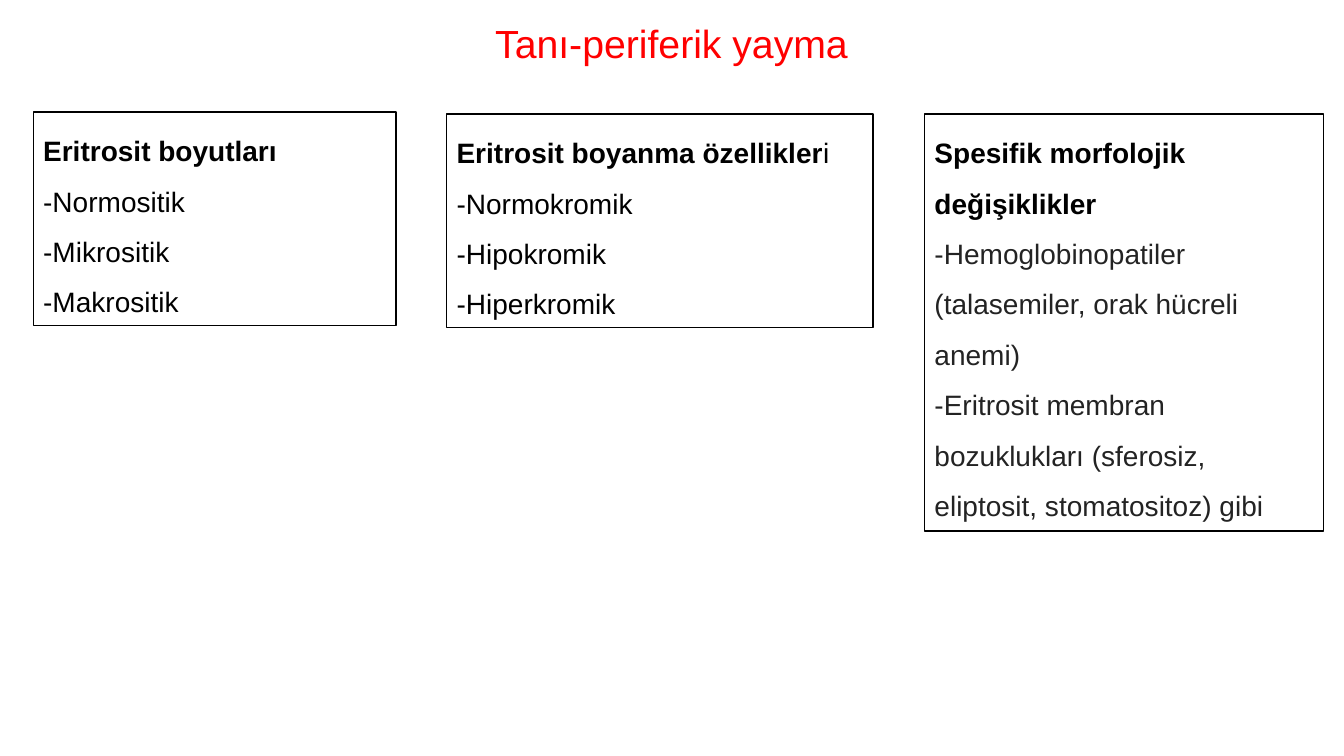
from pptx import Presentation
from pptx.dml.color import RGBColor
from pptx.enum.shapes import MSO_SHAPE
from pptx.enum.text import MSO_ANCHOR, MSO_AUTO_SIZE, PP_ALIGN
from pptx.util import Pt

RECTANGLE = MSO_SHAPE.RECTANGLE
TOP = MSO_ANCHOR.TOP
NO_AUTOFIT, GROW = MSO_AUTO_SIZE.NONE, MSO_AUTO_SIZE.SHAPE_TO_FIT_TEXT
LEFT, CENTER = PP_ALIGN.LEFT, PP_ALIGN.CENTER
PX = 9144  # 100 px to the inch
TITLE_ONLY = 5

BLACK, GREY, RED, WHITE = "000000", "232323", "FF0000", "FFFFFF"

TITLE = "Tanı-periferik yayma"
TITLE_AREA = (33, 14, 1266, 57)

# area, bold heading, plain ending of the heading, items, item colour
BOXES = [
    ((33, 111, 360, 212), "Eritrosit boyutları", "",
     ["-Normositik", "-Mikrositik", "-Makrositik"], BLACK),
    ((443, 113, 423, 212), "Eritrosit boyanma özellikler", "i",
     ["-Normokromik", "-Hipokromik", "-Hiperkromik"], BLACK),
    ((917, 113, 396, 414), "Spesifik morfolojik değişiklikler", "",
     ["-Hemoglobinopatiler (talasemiler, orak hücreli anemi)",
      "-Eritrosit membran bozuklukları (sferosiz, eliptosit, stomatositoz) gibi"],
     GREY),
]


def rgb(color):
    return RGBColor.from_string(color)


def apply(target, formats):
    for name, value in formats.items():
        setattr(target, name, value)


def add_span(para, text, size, color, bold=False):
    span = para.add_run()
    span.text = text
    apply(span.font, {"name": "Arial", "size": Pt(size), "bold": bold})
    span.font.color.rgb = rgb(color)


def add_title(page):
    title = page.shapes.title
    sides = ("left", "top", "width", "height")
    apply(title, {side: px * PX for side, px in zip(sides, TITLE_AREA)})
    frame = title.text_frame
    apply(frame, {"word_wrap": True, "vertical_anchor": TOP, "auto_size": NO_AUTOFIT})
    para = frame.paragraphs[0]
    para.alignment = CENTER
    add_span(para, TITLE, 28, RED)


def add_box(page, area, heading, ending, items, item_color):
    box = page.shapes.add_shape(RECTANGLE, *(px * PX for px in area))
    box.shadow.inherit = False
    box.fill.solid()
    box.fill.fore_color.rgb = rgb(WHITE)
    box.line.color.rgb = rgb(BLACK)
    box.line.width = Pt(1)

    frame = box.text_frame
    apply(frame, {"word_wrap": True, "vertical_anchor": TOP, "auto_size": GROW})
    para = frame.paragraphs[0]
    add_span(para, heading, 20, BLACK, bold=True)
    if ending:
        add_span(para, ending, 20, BLACK)
    for item in items:
        add_span(frame.add_paragraph(), item, 20, item_color)
    for para in frame.paragraphs:
        apply(para, {"alignment": LEFT, "line_spacing": 1.5})


def main():
    deck = Presentation()
    apply(deck, {"slide_width": 1333 * PX, "slide_height": 750 * PX})
    page = deck.slides.add_slide(deck.slide_layouts[TITLE_ONLY])
    add_title(page)
    for box in BOXES:
        add_box(page, *box)
    deck.save("out.pptx")


if __name__ == "__main__":
    main()
